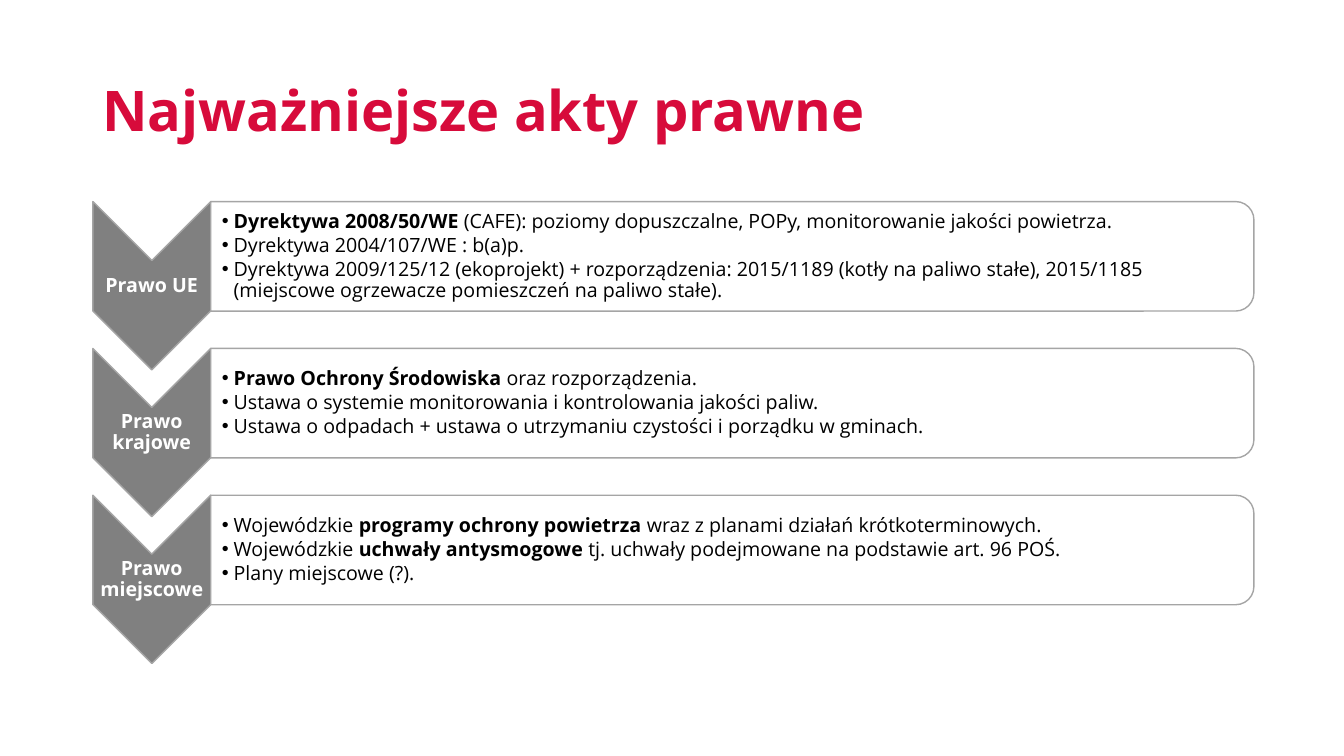
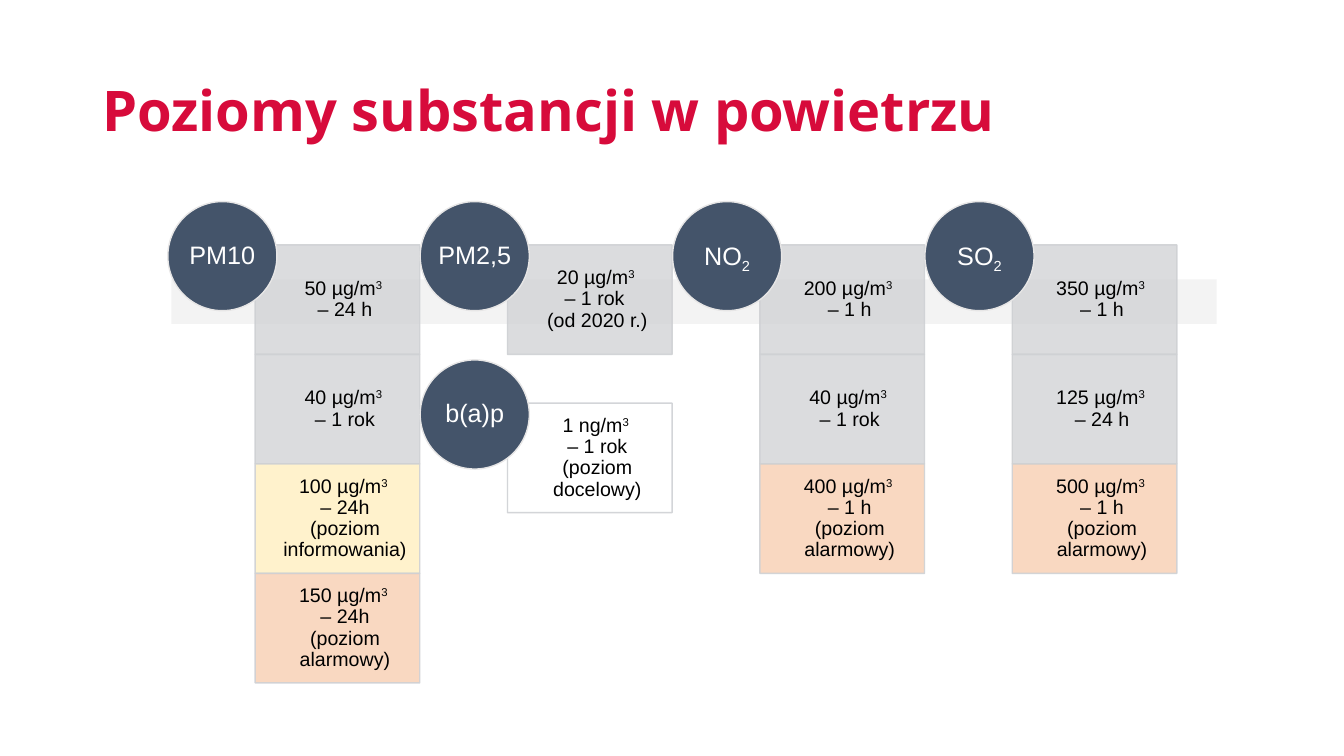
from copy import deepcopy
from dataclasses import dataclass

from lxml import etree
from pptx import Presentation
from pptx.dml.color import RGBColor
from pptx.enum.shapes import MSO_SHAPE
from pptx.enum.text import MSO_ANCHOR, MSO_AUTO_SIZE, PP_ALIGN
from pptx.oxml.ns import qn
from pptx.util import Cm, Pt

RECTANGLE = MSO_SHAPE.RECTANGLE
ELLIPSE = MSO_SHAPE.OVAL
CHEVRON = MSO_SHAPE.CHEVRON
ROUNDED_PANEL = MSO_SHAPE.ROUND_2_SAME_RECTANGLE
MIDDLE = MSO_ANCHOR.MIDDLE
NO_AUTOFIT = MSO_AUTO_SIZE.NONE
LEFT, CENTER = PP_ALIGN.LEFT, PP_ALIGN.CENTER
TITLE_ONLY = 5


@dataclass(frozen=True)
class Theme:
    title: str = "D70B3B"
    text: str = "000000"
    white: str = "FFFFFF"
    chevron: str = "808080"
    outline: str = "A5A5A5"
    band: str = "D9D9D9"
    limit: str = "CFD1D4"
    information: str = "FFF2CC"
    alarm: str = "F8CBAD"
    circle: str = "44546A"
    circle_outline: str = "E7E6E6"
    heading_font: str = "Open Sans"
    level_font: str = "Arial"
    title_size: int = 40
    circle_size: int = 18
    body_size: int = 14


theme = Theme()
BASELINES = {"super": "30000", "sub": "-25000"}


def add_block(slide, kind, box, fill, outline=None, alphas=(), rotation=0):
    """Add a shape at box (cm); alphas are the opacity percentages of fill and outline."""
    shape = slide.shapes.add_shape(kind, *map(Cm, box))
    shape.shadow.inherit = False
    shape.rotation = rotation
    shape.fill.solid()
    shape.fill.fore_color.rgb = RGBColor.from_string(fill)
    if outline:
        shape.line.color.rgb = RGBColor.from_string(outline)
        shape.line.width = Pt(1)
    else:
        shape.line.fill.background()
    colours = list(shape.element.spPr.iter(qn("a:srgbClr")))
    for colour, alpha in zip(colours, alphas):
        etree.SubElement(colour, qn("a:alpha"), val=str(alpha * 1000))
    return shape


def write(shape, paragraphs, font, size, colour, insets=(0, 0, 0, 0),
          alignment=CENTER, bold=False, bullets=False):
    """Fill a shape with paragraphs of (text, style) runs; a newline is a line break."""
    frame = shape.text_frame
    sides = ("margin_left", "margin_top", "margin_right", "margin_bottom")
    frame_format = dict(zip(sides, map(Cm, insets)))
    frame_format.update(word_wrap=True, auto_size=NO_AUTOFIT, vertical_anchor=MIDDLE)
    for name, value in frame_format.items():
        setattr(frame, name, value)
    for index, runs in enumerate(paragraphs):
        paragraph = frame.add_paragraph() if index else frame.paragraphs[0]
        if bullets:
            properties = paragraph._p.get_or_add_pPr()
            properties.set("marL", str(Cm(0.3)))
            properties.set("indent", str(-Cm(0.3)))
            etree.SubElement(properties, qn("a:buFont"), typeface="Arial")
            etree.SubElement(properties, qn("a:buChar"), char="•")
            paragraph.space_after = Pt(2)
        paragraph.alignment = alignment
        paragraph.line_spacing = 0.9
        for text, style in runs:
            for part_index, part in enumerate(text.split("\n")):
                if part_index:
                    paragraph.add_line_break()
                    line_break = paragraph._p.findall(qn("a:br"))[-1]
                    line_break.insert(0, deepcopy(run._r.rPr))
                if not part:
                    continue
                run = paragraph.add_run()
                run.text = part
                run_format = {"name": font, "size": Pt(size), "bold": bold or style == "bold"}
                for name, value in run_format.items():
                    setattr(run.font, name, value)
                run.font.color.rgb = RGBColor.from_string(colour)
                if style in BASELINES:
                    run._r.get_or_add_rPr().set("baseline", BASELINES[style])


presentation = Presentation()
presentation.slide_width = Cm(33.87)
presentation.slide_height = Cm(19.05)

slides = []
for title_text in ("Najważniejsze akty prawne", "Poziomy substancji w powietrzu"):
    slide = presentation.slides.add_slide(presentation.slide_layouts[TITLE_ONLY])
    title = slide.shapes.title
    title_box = {"left": 2.33, "top": 1.01, "width": 29.21, "height": 3.68}
    for name, value in title_box.items():
        setattr(title, name, Cm(value))
    write(title, [[(title_text, "")]], theme.heading_font, theme.title_size, theme.title,
          insets=(0.25, 0.13, 0.25, 0.13), alignment=LEFT, bold=True)
    slides.append(slide)
acts_slide, levels_slide = slides

# Legal acts: one chevron and one panel per level of law
legal_levels = [
    ("Prawo UE", [
        [("Dyrektywa 2008/50/WE ", "bold"),
         ("(CAFE): poziomy dopuszczalne, POPy, monitorowanie jakości powietrza.", "")],
        [("Dyrektywa 2004/107/WE : b(a)p.", "")],
        [("Dyrektywa 2009/125/12 (ekoprojekt) + rozporządzenia: 2015/1189 (kotły na paliwo "
          "stałe), 2015/1185 (miejscowe ogrzewacze pomieszczeń na paliwo stałe).", "")],
    ]),
    ("Prawo krajowe", [
        [("Prawo Ochrony Środowiska ", "bold"), ("oraz rozporządzenia.", "")],
        [("Ustawa o systemie monitorowania i kontrolowania jakości paliw.", "")],
        [("Ustawa o odpadach + ustawa o utrzymaniu czystości i porządku w gminach.", "")],
    ]),
    ("Prawo miejscowe", [
        [("Wojewódzkie ", ""), ("programy ochrony powietrza ", "bold"),
         ("wraz z planami działań krótkoterminowych.", "")],
        [("Wojewódzkie ", ""), ("uchwały antysmogowe ", "bold"),
         ("tj. uchwały podejmowane na podstawie art. 96 POŚ.", "")],
        [("Plany miejscowe (?).", "")],
    ]),
]
ROW_TOP, ROW_PITCH = 5.08, 3.7
CHEVRON_LEFT, CHEVRON_WIDTH, CHEVRON_HEIGHT = 2.34, 2.97, 4.24
PANEL_WIDTH, PANEL_HEIGHT = 26.29, 2.76
LABEL_HEIGHT, ACTS_HEIGHT = 1.27, 2.49
panel_left = CHEVRON_LEFT + CHEVRON_WIDTH

for row, (label, acts) in enumerate(legal_levels):
    top = ROW_TOP + row * ROW_PITCH
    chevron_middle = top + CHEVRON_HEIGHT / 2
    panel_middle = top + PANEL_HEIGHT / 2
    # A quarter turn swaps width and height around the centre
    chevron_box = (CHEVRON_LEFT + (CHEVRON_WIDTH - CHEVRON_HEIGHT) / 2,
                   chevron_middle - CHEVRON_WIDTH / 2, CHEVRON_HEIGHT, CHEVRON_WIDTH)
    panel_box = (panel_left + (PANEL_WIDTH - PANEL_HEIGHT) / 2,
                 panel_middle - PANEL_WIDTH / 2, PANEL_HEIGHT, PANEL_WIDTH)
    add_block(acts_slide, CHEVRON, chevron_box, theme.chevron, theme.outline, rotation=90)
    add_block(acts_slide, ROUNDED_PANEL, panel_box, theme.white, theme.outline,
              alphas=(90,), rotation=90)
    label_box = (CHEVRON_LEFT, chevron_middle - LABEL_HEIGHT / 2, CHEVRON_WIDTH, LABEL_HEIGHT)
    label_shape = acts_slide.shapes.add_textbox(*map(Cm, label_box))
    write(label_shape, [[(label, "")]], theme.heading_font, theme.body_size, theme.white,
          insets=(0.02,) * 4, bold=True)
    acts_box = (panel_left, panel_middle - ACTS_HEIGHT / 2, PANEL_WIDTH - 0.13, ACTS_HEIGHT)
    acts_shape = acts_slide.shapes.add_textbox(*map(Cm, acts_box))
    write(acts_shape, acts, theme.heading_font, theme.body_size, theme.text,
          insets=(0.28, 0.02, 0.02, 0.02), alignment=LEFT, bullets=True)

# Substance levels: a circle per substance with its stack of cells
FIRST_TOP, SECOND_TOP = 5.08, 9.07
substances = [
    (0, FIRST_TOP, [("PM10", "")], [
        ("50 µg/m", "– 24 h", theme.limit),
        ("40 µg/m", "– 1 rok", theme.limit),
        ("100 µg/m", "– 24h\n(poziom informowania)", theme.information),
        ("150 µg/m", "– 24h\n(poziom alarmowy)", theme.alarm),
    ]),
    (1, FIRST_TOP, [("PM2,5", "")], [("20 µg/m", "– 1 rok \n(od 2020 r.)", theme.limit)]),
    (1, SECOND_TOP, [("b(a)p", "")], [("1 ng/m", "– 1 rok\n(poziom docelowy)", theme.white)]),
    (2, FIRST_TOP, [("NO", ""), ("2", "sub")], [
        ("200 µg/m", "– 1 h", theme.limit),
        ("40 µg/m", "– 1 rok", theme.limit),
        ("400 µg/m", "– 1 h\n(poziom alarmowy)", theme.alarm),
    ]),
    (3, FIRST_TOP, [("SO", ""), ("2", "sub")], [
        ("350 µg/m", "– 1 h", theme.limit),
        ("125 µg/m", "– 24 h", theme.limit),
        ("500 µg/m", "– 1 h\n(poziom alarmowy)", theme.alarm),
    ]),
]
CIRCLE_LEFT, COLUMN_PITCH, DIAMETER = 4.23, 6.36, 2.75
CELL_OFFSET_X, CELL_OFFSET_Y = 2.2, 1.09
CELL_WIDTH, CELL_HEIGHT = 4.15, 2.76

add_block(levels_slide, RECTANGLE, (4.32, 7.04, 26.34, 1.12), theme.band, alphas=(30,))
for column, top, name_runs, cells in substances:
    left = CIRCLE_LEFT + column * COLUMN_PITCH + CELL_OFFSET_X
    for row, (amount, period, fill) in enumerate(cells):
        cell_box = (left, top + CELL_OFFSET_Y + row * CELL_HEIGHT, CELL_WIDTH, CELL_HEIGHT)
        fill_alpha = 100 if fill == theme.information else 75
        cell = add_block(levels_slide, RECTANGLE, cell_box, fill, theme.limit,
                         alphas=(fill_alpha, 90))
        write(cell, [[(amount, ""), ("3 \n", "super"), (period, "")]], theme.level_font,
              theme.body_size, theme.text, insets=(0.66, 0.28, 0.28, 0.28))
for column, top, name_runs, cells in substances:
    circle_box = (CIRCLE_LEFT + column * COLUMN_PITCH, top, DIAMETER, DIAMETER)
    circle = add_block(levels_slide, ELLIPSE, circle_box, theme.circle, theme.circle_outline)
    write(circle, [name_runs], theme.level_font, theme.circle_size, theme.white)

presentation.save("out.pptx")
